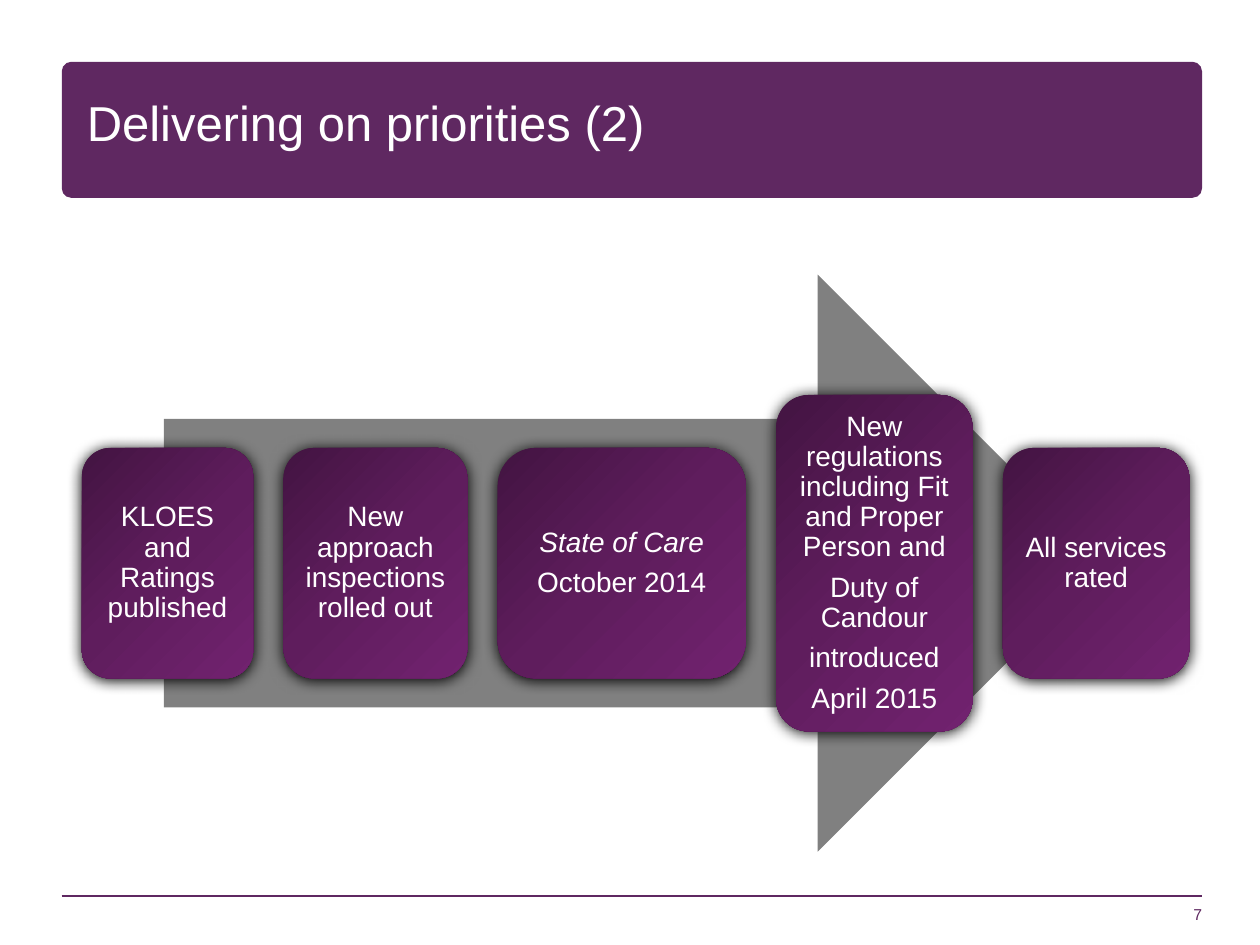
from dataclasses import dataclass

from lxml import etree
from pptx import Presentation
from pptx.dml.color import RGBColor
from pptx.enum.shapes import MSO_CONNECTOR as Connector, MSO_SHAPE as Shape
from pptx.enum.text import MSO_ANCHOR as Anchor, PP_ALIGN as Align
from pptx.oxml import parse_xml
from pptx.oxml.ns import nsdecls, qn
from pptx.util import Inches, Pt


@dataclass(frozen=True)
class Theme:
    font: str = "Arial"
    purple: str = "5F2861"
    grey: str = "808080"
    white: str = "FFFFFF"
    shadow: str = "000000"
    gradient: tuple = ((0, "431442"), (50, "5F1D5D"), (100, "71226F"))
    title_size: int = 28
    step_size: int = 16
    number_size: int = 9


class SlideBuilder:
    def __init__(self, slide, theme):
        self.shapes = slide.shapes
        self.theme = theme

    def shape(self, kind, left, top, width, height, color):
        shape = self.shapes.add_shape(
            kind, Inches(left), Inches(top), Inches(width), Inches(height))
        shape.shadow.inherit = False
        shape.fill.solid()
        shape.fill.fore_color.rgb = RGBColor.from_string(color)
        shape.line.fill.background()
        return shape

    def rule(self, left, right, top):
        rule = self.shapes.add_connector(
            Connector.STRAIGHT, Inches(left), Inches(top), Inches(right), Inches(top))
        rule.line.color.rgb = RGBColor.from_string(self.theme.purple)
        rule.line.width = Pt(1)
        etree.SubElement(rule._element.spPr, qn("a:effectLst"))

    def fill_text(self, frame, lines, size, color, align, anchor, insets, spacing=1.0, after=0):
        frame.word_wrap = True
        frame.vertical_anchor = anchor
        frame.margin_left = frame.margin_right = Inches(insets[0])
        frame.margin_top = frame.margin_bottom = Inches(insets[1])
        frame.text = "\n".join(lines)
        for para in frame.paragraphs:
            para.alignment = align
            para.line_spacing = spacing
            para.space_after = Pt(after)
            para.font.name = self.theme.font
            para.font.size = Pt(size)
            para.font.color.rgb = RGBColor.from_string(color)

    def text(self, left, top, width, height, line, *style):
        box = self.shapes.add_textbox(
            Inches(left), Inches(top), Inches(width), Inches(height))
        self.fill_text(box.text_frame, [line], *style)

    def step(self, left, middle, width, height, lines):
        theme = self.theme
        card = self.shape(Shape.ROUNDED_RECTANGLE, left, middle - height / 2,
                          width, height, theme.purple)
        properties = card._element.spPr
        stops = "".join(
            f'<a:gs pos="{position * 1000}"><a:srgbClr val="{color}"/></a:gs>'
            for position, color in theme.gradient)
        properties.replace(properties.find(qn("a:solidFill")), parse_xml(
            f'<a:gradFill {nsdecls("a")} rotWithShape="1"><a:gsLst>{stops}</a:gsLst>'
            '<a:lin ang="2700000" scaled="0"/></a:gradFill>'))
        properties.replace(properties.find(qn("a:effectLst")), parse_xml(
            f'<a:effectLst {nsdecls("a")}><a:outerShdw blurRad="{Pt(8.5)}" '
            f'dist="{Pt(1)}" dir="5400000" rotWithShape="0">'
            f'<a:srgbClr val="{theme.shadow}"/></a:outerShdw></a:effectLst>'))
        self.fill_text(card.text_frame, lines, theme.step_size, theme.white,
                       Align.CENTER, Anchor.MIDDLE, (0.07, 0.07), 0.9, 5.8)
        return card


def main():
    """Build the priorities timeline slide and save it."""
    deck = Presentation()
    deck.slide_width, deck.slide_height = Inches(10), Inches(7.5)
    theme = Theme()
    page = SlideBuilder(deck.slides.add_slide(deck.slide_layouts[6]), theme)

    banner = page.shape(Shape.ROUNDED_RECTANGLE, 0.49, 0.49, 9.05, 1.08, theme.purple)
    banner.adjustments[0] = 0.07
    page.rule(0.49, 9.54, 7.11)
    page.text(7.46, 6.83, 2.08, 0.5, "7", theme.number_size, theme.purple,
              Align.RIGHT, Anchor.BOTTOM, (0, 0))
    page.text(0.59, 0.76, 6.38, 0.63, "Delivering on priorities (2)", theme.title_size,
              theme.white, Align.LEFT, Anchor.TOP, (0.1, 0.05), 0.85)

    page.shape(Shape.RIGHT_ARROW, 1.3, 2.18, 7.48, 4.58, theme.grey)
    steps = [
        (1.36, 1.83, ["KLOES and Ratings published"]),
        (1.46, 1.83, ["New approach inspections rolled out"]),
        (1.97, 1.83, ["State of Care", "October 2014"]),
        (1.56, 2.67, ["New regulations including Fit and Proper Person and",
                      "Duty of Candour", "introduced", "April 2015"]),
        (1.48, 1.83, ["All services rated"]),
    ]
    left, gap, middle = 0.65, 0.24, 4.47
    cards = []
    for width, height, lines in steps:
        cards.append(page.step(left, middle, width, height, lines))
        left += width + gap
    report = cards[2].text_frame.paragraphs[0]
    report.font.italic = True

    deck.save("out.pptx")


if __name__ == "__main__":
    main()
